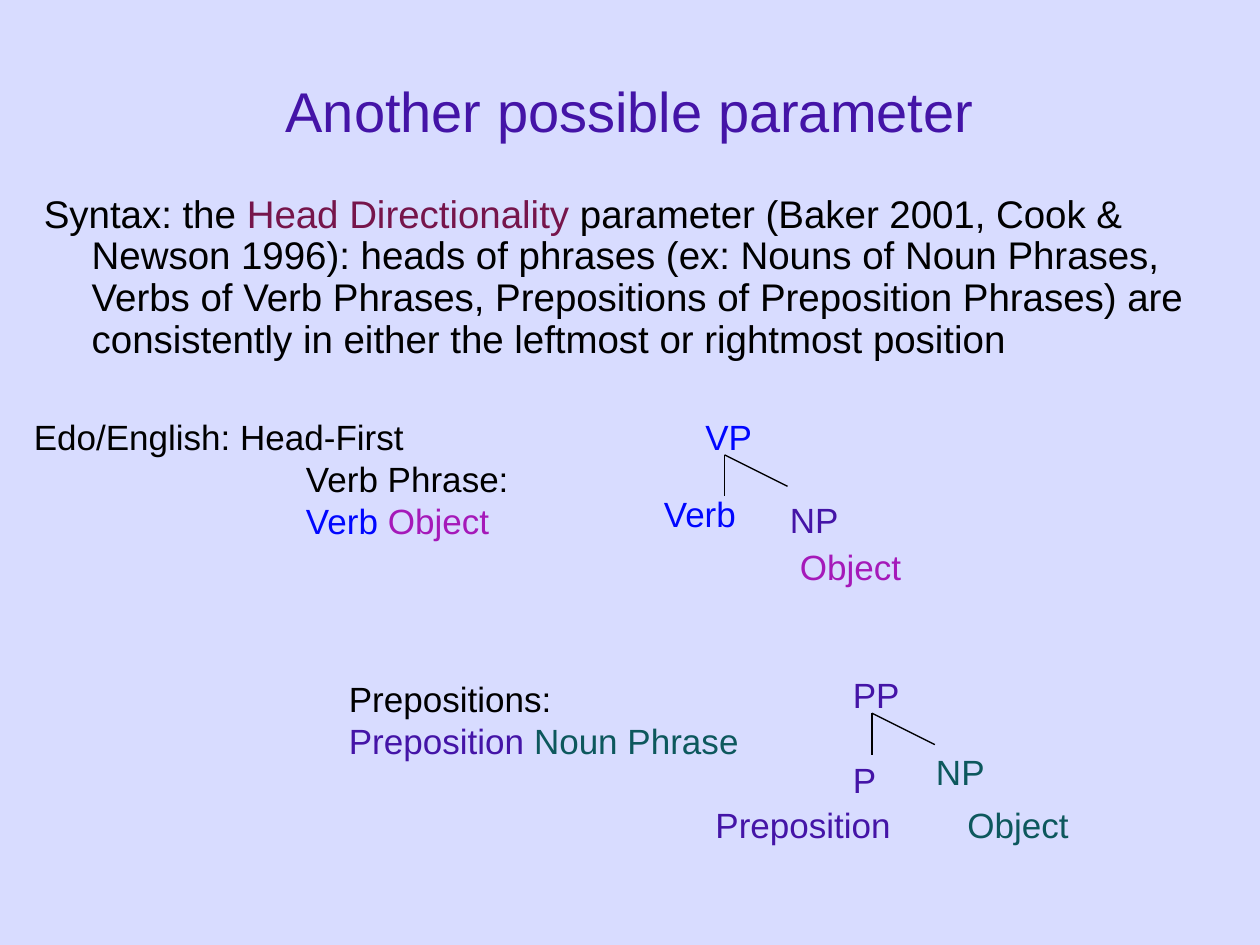
from pptx import Presentation
from pptx.util import Inches, Pt
from pptx.dml.color import RGBColor
from pptx.enum.shapes import MSO_CONNECTOR
from pptx.enum.text import MSO_ANCHOR, MSO_AUTO_SIZE, PP_ALIGN
from pptx.oxml.ns import qn
from lxml.etree import SubElement

THEME = {
    "font": "Arial", "title": 32, "body": 22, "label": 20, "line": 0.75,
    "back": "D8DCFF", "ink": "000000", "head": "4414A7", "term": "76154B",
    "verb": "0006FF", "object": "A519B9", "noun": "0D585D",
}

TITLE = [[("Another possible parameter", "head")]]
BODY = [[
    ("Syntax: the ", "ink"),
    ("Head Directionality", "term"),
    (" parameter (Baker 2001, Cook & Newson 1996): heads of phrases "
     "(ex: Nouns of Noun Phrases, Verbs of Verb Phrases, Prepositions of "
     "Preposition Phrases) are consistently in either the leftmost or "
     "rightmost position", "ink"),
]]
NOTES = [
    ((0.17, 3.25, 3.17, 0.43), [[("Edo/English: Head-First", "ink")]]),
    ((2.33, 3.58, 4.08, 0.77), [[("Verb Phrase:", "ink")],
                                [("Verb ", "verb"), ("Object", "object")]]),
    ((2.67, 5.33, 4.08, 0.77), [[("Prepositions:", "ink")],
                                [("Preposition ", "head"), ("Noun Phrase", "noun")]]),
]
TREES = [
    {"apex": (5.75, 3.61), "nodes": [
        ("VP", "verb", 5.5, 3.25, 0.57), ("Verb", "verb", 5.17, 3.86, 1.08),
        ("NP", "head", 6.17, 3.91, 0.59), ("Object", "object", 6.25, 4.28, 1.42)]},
    {"apex": (6.92, 5.66), "nodes": [
        ("PP", "head", 6.67, 5.3, 0.57), ("P", "head", 6.67, 5.97, 0.39),
        ("NP", "noun", 7.33, 5.91, 1.08), ("Preposition", "head", 5.58, 6.33, 2.33),
        ("Object", "noun", 7.58, 6.33, 1.42)]},
]
LIMBS = [(0, 0.33), (0.5, 0.25)]


def tint(name):
    return RGBColor.from_string(THEME[name])


def write(slide, area, paras, size="label", align=PP_ALIGN.LEFT,
          anchor=MSO_ANCHOR.TOP, hang=0, space=1.0, wrap=True, grow=True):
    frame = slide.shapes.add_textbox(*map(Inches, area)).text_frame
    frame.word_wrap = wrap
    frame.auto_size = MSO_AUTO_SIZE.SHAPE_TO_FIT_TEXT if grow else MSO_AUTO_SIZE.NONE
    frame.vertical_anchor = anchor
    for i, runs in enumerate(paras):
        para = frame.paragraphs[0] if i == 0 else frame.add_paragraph()
        para.alignment = align
        para.line_spacing = space
        if hang:
            props = para._p.get_or_add_pPr()
            props.set("marL", str(Inches(hang)))
            props.set("indent", str(-Inches(hang)))
        for text, color in runs:
            run = para.add_run()
            run.text = text
            run.font.name = THEME["font"]
            run.font.size = Pt(THEME[size])
            run.font.color.rgb = tint(color)


def branch(slide, apex, limb):
    x, y = apex
    ends = (x, y, x + limb[0], y + limb[1])
    line = slide.shapes.add_connector(MSO_CONNECTOR.STRAIGHT, *map(Inches, ends))
    line.line.color.rgb = tint("ink")
    line.line.width = Pt(THEME["line"])
    SubElement(line._element.spPr, qn("a:effectLst"))


def main():
    """Build the head directionality slide."""
    deck = Presentation()
    deck.slide_width, deck.slide_height = Inches(10), Inches(7.5)
    slide = deck.slides.add_slide(deck.slide_layouts[6])
    slide.background.fill.solid()
    slide.background.fill.fore_color.rgb = tint("back")

    write(slide, (0.75, 0.25, 8.5, 1.25), TITLE, size="title",
          align=PP_ALIGN.CENTER, anchor=MSO_ANCHOR.MIDDLE, grow=False)
    write(slide, (0.25, 1.5, 9.33, 2), BODY, size="body",
          hang=0.38, space=0.9, grow=False)
    for tree in TREES:
        for text, color, x, y, width in tree["nodes"]:
            write(slide, (x, y, width, 0.43), [[(text, color)]], wrap=width > 1)
        for limb in LIMBS:
            branch(slide, tree["apex"], limb)
    for area, paras in NOTES:
        write(slide, area, paras)
    deck.save("out.pptx")


if __name__ == "__main__":
    main()
